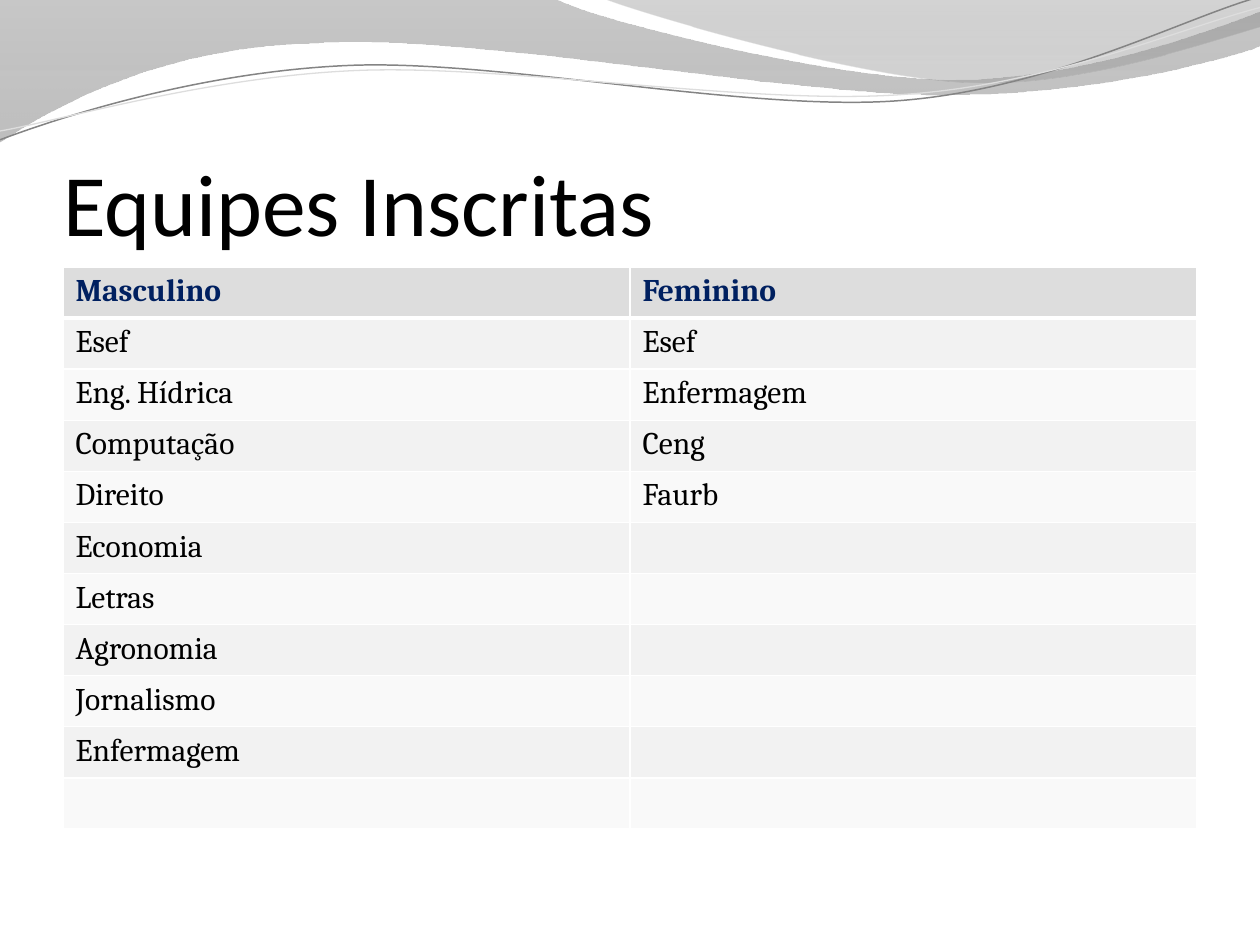
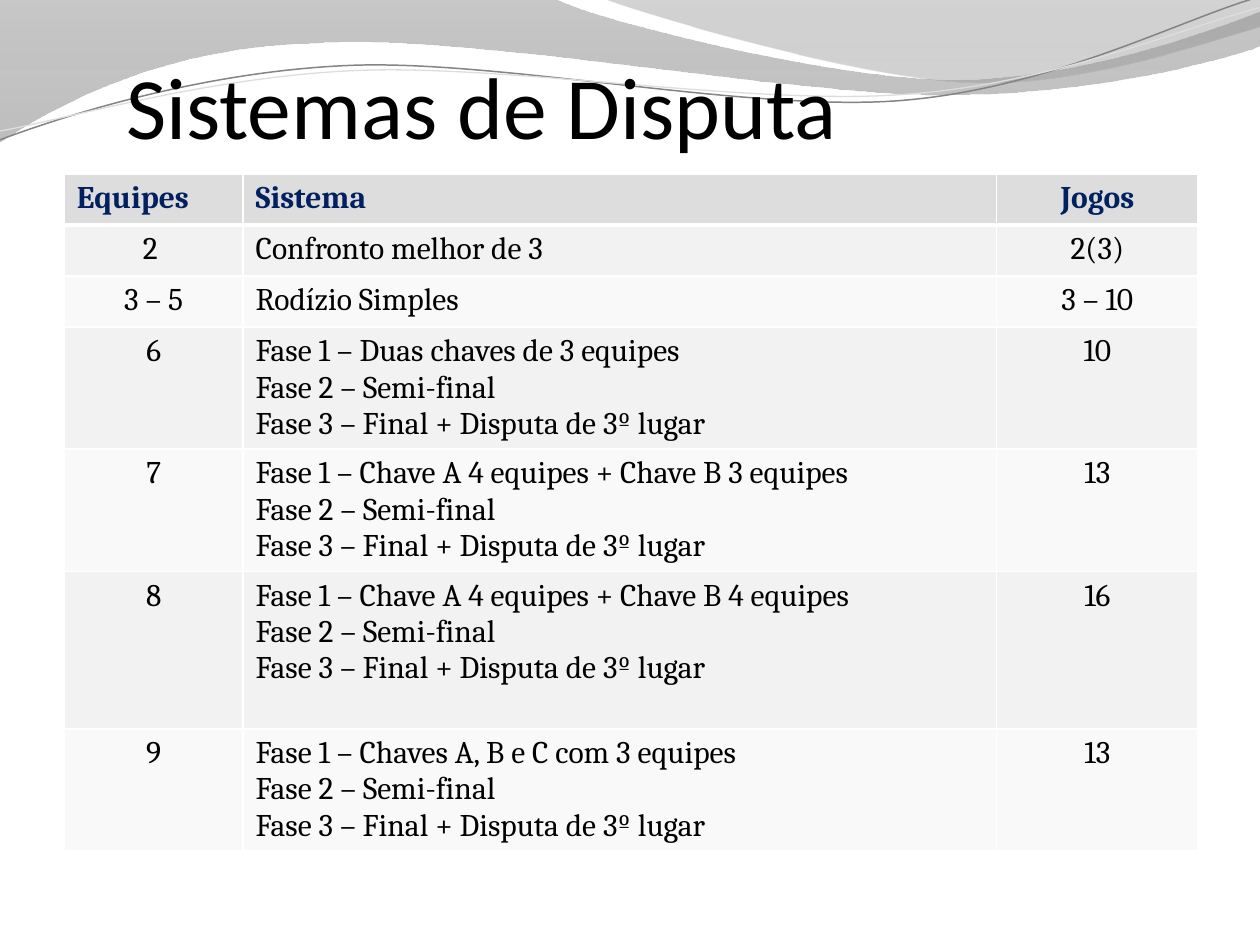
from lxml.etree import SubElement
from pptx import Presentation
from pptx.dml.color import RGBColor
from pptx.enum.text import MSO_ANCHOR, MSO_AUTO_SIZE, PP_ALIGN
from pptx.oxml.ns import qn
from pptx.util import Inches, Pt

COLORS = {
    "text": "000000", "head_text": "002060", "border": "FFFFFF",
    "head": "DDDDDD", "odd": "F2F2F2", "even": "F9F9F9",
    "dark_line": "848484", "light_line": "DDDDDD",
    "band_top": "848484", "band_end": "888888",
    "corner_top": "6F6F6F", "corner_end": "9D9D9D",
}
TITLE_FONT, TABLE_FONT = "Calibri", "Cambria"
ROW_H = 4.46 / 11
PHASES_H = 0.97
CENTER, LEFT = PP_ALIGN.CENTER, PP_ALIGN.LEFT

# Wave outlines: two numbers are a line end, six are a Bézier segment
BAND = [(0, 0), (4.4, -0.01), (4.76, 0.17, 6.64, 0.63, 7.58, 0.63),
        (8.53, 0.63, 9.58, 0.26, 10, 0.09), (10.01, 0.36),
        (9.83, 0.44, 8.7, 0.76, 7.46, 0.75),
        (6.22, 0.75, 3.82, 0.28, 2.57, 0.34),
        (1.29, 0.36, 0.46, 0.83, -0.01, 1.13), (0, 0)]
CORNER = [(4.79, -0.01), (5.09, 0.11, 6.82, 0.62, 7.69, 0.65),
          (8.56, 0.69, 9.61, 0.32, 10, 0.21), (10, 0), (4.79, -0.01)]
DARK_CURVE = [(0, 1.11), (0.48, 0.93, 1.58, 0.57, 2.77, 0.52),
              (3.95, 0.47, 5.93, 0.89, 7.13, 0.8),
              (8.33, 0.71, 9.38, 0.15, 9.98, -0.02)]
LIGHT_CURVE = [(0, 1.04), (0.47, 0.96, 1.64, 0.61, 2.83, 0.56),
               (4.03, 0.51, 5.97, 0.84, 7.17, 0.75),
               (8.36, 0.67, 9.41, 0.21, 10, 0.06)]

TEAMS_MEN = ["Esef", "Eng. Hídrica", "Computação", "Direito", "Economia",
             "Letras", "Agronomia", "Jornalismo", "Enfermagem", ""]
TEAMS_WOMEN = ["Esef", "Enfermagem", "Ceng", "Faurb"]


def rgb(name):
    return RGBColor.from_string(COLORS[name])


def add_outline(s, outline, close):
    """Build a freeform, then join each three-point segment into a curve."""
    points = [(Inches(x), Inches(y)) for segment in outline
              for x, y in zip(segment[::2], segment[1::2])]
    builder = s.shapes.build_freeform(*points[0])
    builder.add_line_segments(points[1:], close=close)
    sp = builder.convert_to_shape()
    sp.shadow.inherit = False
    lines = iter(list(sp._element.iter(qn("a:lnTo"))))
    for segment in outline[1:]:
        first = next(lines)
        if len(segment) == 6:
            first.tag = qn("a:cubicBezTo")
            for _ in range(2):
                extra = next(lines)
                first.append(extra[0])
                extra.getparent().remove(extra)
    return sp


def add_wave(s, outline, stops):
    """Closed wave; each stop is position, colour name, opacity in percent."""
    sp = add_outline(s, outline, True)
    sp.line.fill.background()
    sp.fill.gradient()
    sp.fill.gradient_angle = 270
    for stop, (_, color, _) in zip(sp.fill.gradient_stops, stops):
        stop.color.rgb = rgb(color)
    for gs, (pos, _, opacity) in zip(sp._element.iter(qn("a:gs")), stops):
        gs.set("pos", str(pos * 1000))
        SubElement(gs[0], qn("a:alpha"), val=str(opacity * 1000))
    return sp


def add_curve(s, outline, color, width):
    sp = add_outline(s, outline, False)
    sp.fill.background()
    sp.line.color.rgb = rgb(color)
    sp.line.width = Pt(width)
    return sp


def decorate_layout(s):
    """Draw the waves and move them to the layout shared by the slides."""
    waves = [
        add_wave(s, BAND, [(0, "band_top", 45), (100, "band_end", 55)]),
        add_wave(s, CORNER, [(0, "corner_top", 30), (80, "corner_end", 45)]),
        add_curve(s, DARK_CURVE, "dark_line", 0.85),
        add_curve(s, LIGHT_CURVE, "light_line", 0.75),
    ]
    for sp in waves:
        s.slide_layout.shapes._spTree.append(sp._element)


def set_title(s, text, left, top):
    title = s.shapes.title
    title.left, title.top = Inches(left), Inches(top)
    title.width, title.height = Inches(9), Inches(1.25)
    tf = title.text_frame
    tf.text = text
    tf.auto_size = MSO_AUTO_SIZE.NONE
    tf.vertical_anchor = MSO_ANCHOR.BOTTOM
    tf.margin_left = tf.margin_right = tf.margin_bottom = 0
    tf.margin_top = Inches(0.05)
    p = tf.paragraphs[0]
    p.alignment = LEFT
    font = p.runs[0].font
    font.name, font.size, font.color.rgb = TITLE_FONT, Pt(50), rgb("text")


def set_borders(cell, top, bottom):
    tcPr = cell._tc.get_or_add_tcPr()
    for side, width in (("L", 1), ("R", 1), ("T", top), ("B", bottom)):
        ln = SubElement(tcPr, qn(f"a:ln{side}"), w=str(Pt(width)))
        fill = SubElement(ln, qn("a:solidFill"))
        SubElement(fill, qn("a:srgbClr"), val=COLORS["border"])


def fill_cell(cell, text, row, alignment):
    is_head = row == 0
    set_borders(cell, 3 if row == 1 else 1, 3 if is_head else 1)
    cell.fill.solid()
    cell.fill.fore_color.rgb = rgb(
        "head" if is_head else "odd" if row % 2 else "even")
    cell.text_frame.text = text
    for p in cell.text_frame.paragraphs:
        p.alignment = alignment
        p.font.size = Pt(18)
        for r in p.runs:
            r.font.name, r.font.size = TABLE_FONT, Pt(18)
            r.font.bold = is_head
            r.font.color.rgb = rgb("head_text" if is_head else "text")


def add_grid(s, left, top, col_widths, row_heights, rows, alignments):
    table = s.shapes.add_table(
        len(rows), len(col_widths), Inches(left), Inches(top),
        Inches(sum(col_widths)), Inches(sum(row_heights))).table
    for column, width in zip(table.columns, col_widths):
        column.width = Inches(width)
    for i, (row, height) in enumerate(zip(rows, row_heights)):
        table.rows[i].height = Inches(height)
        for j, text in enumerate(row):
            # The first header stays left of its centred column
            alignment = LEFT if i == j == 0 else alignments[j]
            fill_cell(table.cell(i, j), text, i, alignment)


def phases(groups):
    return (f"Fase 1 – {groups}\nFase 2 – Semi-final\n"
            "Fase 3 – Final + Disputa de 3º lugar")


def main():
    prs = Presentation()
    prs.slide_width, prs.slide_height = Inches(10), Inches(7.5)
    layout = prs.slide_layouts[5]

    # Registered teams
    s = prs.slides.add_slide(layout)
    decorate_layout(s)
    set_title(s, "Equipes Inscritas", 0.5, 0.77)
    women = TEAMS_WOMEN + [""] * (len(TEAMS_MEN) - len(TEAMS_WOMEN))
    rows = [("Masculino", "Feminino"), *zip(TEAMS_MEN, women)]
    add_grid(s, 0.5, 2.12, [4.5, 4.5], [ROW_H] * len(rows), rows, [LEFT, LEFT])

    # Competition systems
    s = prs.slides.add_slide(layout)
    set_title(s, "Sistemas de Disputa", 1, 0)
    rows = [
        ("Equipes", "Sistema", "Jogos"),
        ("2 ", "Confronto melhor de 3", "2(3)"),
        ("3 – 5", "Rodízio Simples", "3 – 10"),
        ("6", phases("Duas chaves de 3 equipes"), "10"),
        ("7", phases("Chave A 4 equipes + Chave B 3 equipes"), "13"),
        ("8", phases("Chave A 4 equipes + Chave B 4 equipes"), "16"),
        ("9", phases("Chaves A, B e C com 3 equipes"), "13"),
    ]
    heights = [ROW_H] * 3 + [PHASES_H, PHASES_H, 1.25, PHASES_H]
    add_grid(s, 0.51, 1.38, [1.42, 5.98, 1.6], heights, rows,
             [CENTER, LEFT, CENTER])

    prs.save("out.pptx")


if __name__ == "__main__":
    main()
